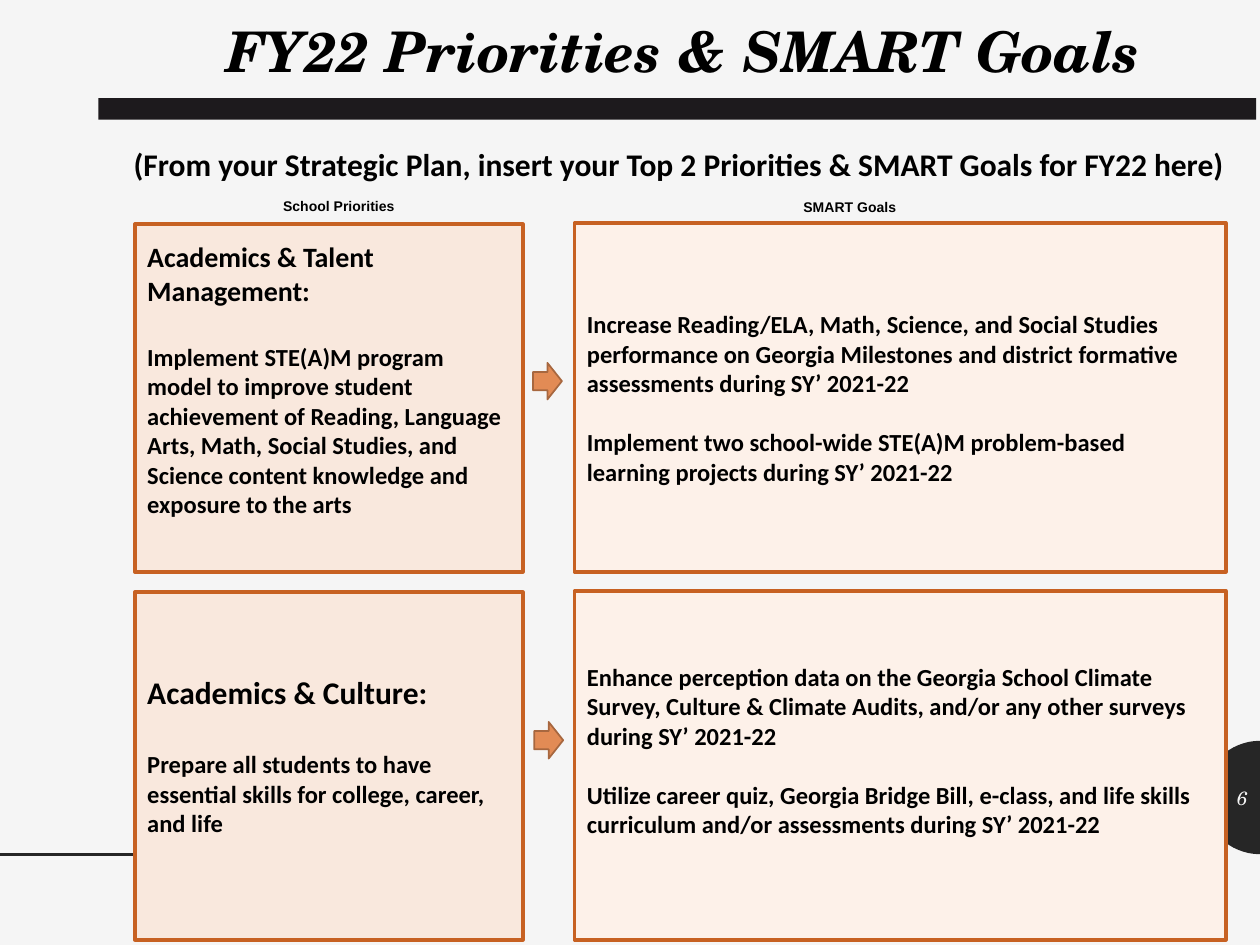
from dataclasses import dataclass
from math import cos, pi, sin

from lxml import etree
from pptx import Presentation
from pptx.dml.color import RGBColor
from pptx.enum.shapes import MSO_CONNECTOR, MSO_SHAPE
from pptx.enum.text import MSO_ANCHOR, MSO_AUTO_SIZE, PP_ALIGN
from pptx.oxml.ns import qn
from pptx.util import Inches, Pt

RECT, ARROW = MSO_SHAPE.RECTANGLE, MSO_SHAPE.RIGHT_ARROW
LINE = MSO_CONNECTOR.STRAIGHT
LEFT, MID, RIGHT = PP_ALIGN.LEFT, PP_ALIGN.CENTER, PP_ALIGN.RIGHT
TOP, CENTER = MSO_ANCHOR.TOP, MSO_ANCHOR.MIDDLE
FIXED = MSO_AUTO_SIZE.NONE


@dataclass(frozen=True)
class Theme:
    back: str = "F5F5F5"
    dark: str = "262626"
    bar: str = "1D1A1D"
    ink: str = "000000"
    goal: str = "FDF1E9"
    plan: str = "F9E8DD"
    edge: str = "C76122"
    arrow: str = "E28B55"
    rim: str = "A7673F"
    serif: str = "TeX Gyre Schola"
    sans: str = "Calibri"
    label: str = "Arial"
    title: int = 32
    lead: int = 18
    head: int = 16
    body: int = 14
    page: int = 11
    small: int = 8


THEME = Theme()

ROWS = [
    {
        "top": 1.77,
        "plan": [
            ("Academics & Talent Management:", THEME.head),
            ("Implement STE(A)M program model to improve student achievement of "
             "Reading, Language Arts, Math, Social Studies, and Science content "
             "knowledge and exposure to the arts", THEME.body),
        ],
        "goal": [
            ("Increase Reading/ELA, Math, Science, and Social Studies performance on "
             "Georgia Milestones and district formative assessments during "
             "SY’ 2021-22", THEME.body),
            ("Implement two school-wide STE(A)M problem-based learning projects "
             "during SY’ 2021-22", THEME.body),
        ],
        "lift": (0.3, 0),
        "arrow": (4.23, 2.88),
    },
    {
        "top": 4.69,
        "plan": [
            ("Academics & Culture:", THEME.lead),
            ("Prepare all students to have essential skills for college, career, "
             "and life", THEME.body),
        ],
        "goal": [
            ("Enhance perception data on the Georgia School Climate Survey, Culture & "
             "Climate Audits, and/or any other surveys during SY’ 2021-22", THEME.body),
            ("Utilize career quiz, Georgia Bridge Bill, e-class, and life skills "
             "curriculum and/or assessments during SY’ 2021-22", THEME.body),
        ],
        "lift": (0.17, 0.24),
        "arrow": (4.24, 5.73),
    },
]


def color(code):
    return RGBColor.from_string(code)


def paint(shape, fill, edge=None, width=2):
    shape.shadow.inherit = False
    shape.fill.solid()
    shape.fill.fore_color.rgb = color(fill)
    if edge:
        shape.line.color.rgb = color(edge)
        shape.line.width = Pt(width)
    else:
        shape.line.fill.background()
    return shape


def block(slide, kind, area, fill, **style):
    shape = slide.shapes.add_shape(kind, *map(Inches, area))
    return paint(shape, fill, **style)


def write(shape, parts, *, font=THEME.sans, ink=THEME.ink, bold=True,
          italic=False, align=LEFT, anchor=TOP, wrap=True, lift=0):
    frame = shape.text_frame
    frame.auto_size = FIXED
    frame.word_wrap = wrap
    frame.vertical_anchor = anchor
    frame.margin_bottom = Inches(0.05 + lift)
    above = None
    for text, size in parts:
        para = frame.add_paragraph() if above else frame.paragraphs[0]
        para.alignment = align
        para.space_before = Pt(round(above * 1.22) if above else 0)
        run = para.add_run()
        run.text = text
        run.font.name = font
        run.font.size = Pt(size)
        run.font.bold = bold
        run.font.italic = italic
        run.font.color.rgb = color(ink)
        above = size


def label(slide, area, text, size, **style):
    box = slide.shapes.add_textbox(*map(Inches, area))
    write(box, [(text, size)], **style)


def rule(slide, start, end):
    line = slide.shapes.add_connector(LINE, *map(Inches, start + end))
    line.line.color.rgb = color(THEME.dark)
    line.line.width = Pt(2)
    etree.SubElement(line._element.spPr, qn("a:effectLst"))


def dome(slide, x, y, radius, steps=32):
    turns = [pi / 2 + pi * i / steps for i in range(steps + 1)]
    dots = [(Inches(x + radius * cos(t)), Inches(y + radius * sin(t)))
            for t in turns]
    build = slide.shapes.build_freeform(*dots[0])
    build.add_line_segments(dots[1:], close=True)
    paint(build.convert_to_shape(), THEME.dark)


def head(slide):
    title = slide.shapes.title
    title.left, title.top, title.width, title.height = map(
        Inches, (0.96, 0.08, 8.93, 0.64))
    write(title, [("FY22 Priorities & SMART Goals", THEME.title)],
          font=THEME.serif, italic=True, align=MID)
    block(slide, RECT, (0.78, 0.78, 9.19, 0.17), THEME.bar)
    label(slide, (0.78, 1.1, 9.22, 0.71),
          "(From your Strategic Plan, insert your Top 2 Priorities & SMART Goals "
          "for FY22 here)", THEME.lead, align=MID)
    label(slide, (2.14, 1.52, 1.1, 0.24), "School Priorities", THEME.small,
          font=THEME.label, align=MID, wrap=False)
    label(slide, (6.1, 1.53, 1.29, 0.24), "SMART Goals", THEME.small,
          font=THEME.label, align=MID)


def row(slide, data):
    top = data["top"]
    low, high = data["lift"]
    goal = block(slide, RECT, (4.56, top, 5.17, 2.77), THEME.goal, edge=THEME.edge)
    write(goal, data["goal"], anchor=CENTER, lift=high)
    plan = block(slide, RECT, (1.07, top + 0.01, 3.08, 2.76), THEME.plan,
                 edge=THEME.edge)
    write(plan, data["plan"], anchor=CENTER, lift=low)
    block(slide, ARROW, data["arrow"] + (0.23, 0.29), THEME.arrow,
          edge=THEME.rim, width=1)


def main():
    deck = Presentation()
    deck.slide_width, deck.slide_height = Inches(10), Inches(7.5)
    slide = deck.slides.add_slide(deck.slide_layouts[5])
    slide.background.fill.solid()
    slide.background.fill.fore_color.rgb = color(THEME.back)
    dome(slide, 10, 6.33, 0.45)
    rule(slide, (0, 6.78), (3.69, 6.78))
    head(slide)
    for data in ROWS:
        row(slide, data)
    label(slide, (9.55, 6.13, 0.45, 0.4), "6", THEME.page, font=THEME.serif,
          ink=THEME.back, bold=False, italic=True, align=RIGHT, anchor=CENTER)
    deck.save("out.pptx")


if __name__ == "__main__":
    main()
